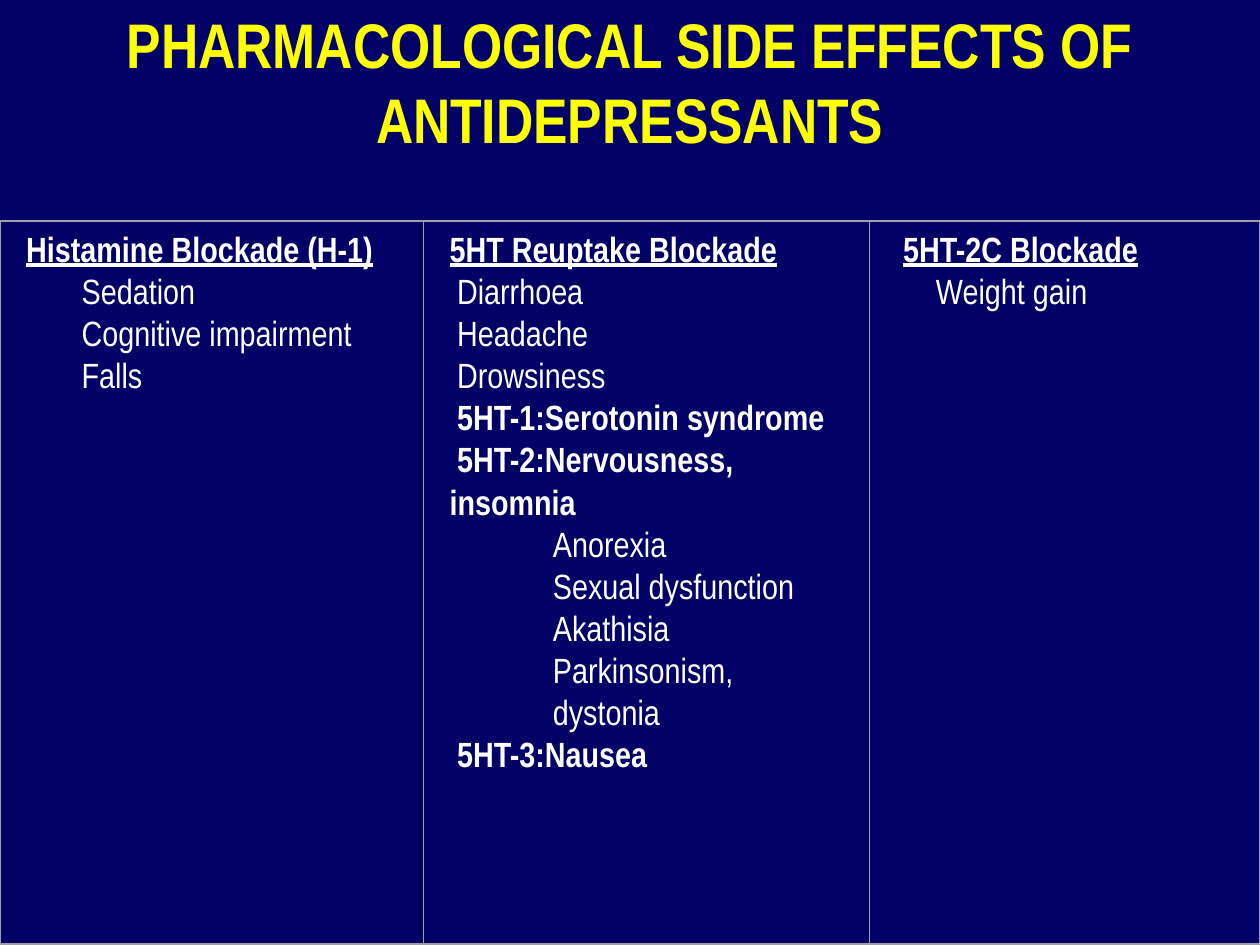
import pptx
import pptx.util
import pptx.dml.color
import pptx.enum.shapes
import pptx.enum.text

Inches = pptx.util.Inches
FONT = "Arial Narrow"
TOP, DEEP = 1.76, 5.73

# Each line: first-line indent in inches, text, bold
HIST = [(0, "Histamine Blockade (H-1)", True)] + [
    (0.44, text, False)
    for text in ("Sedation", "Cognitive impairment", "Falls")]
REUP = [
    (0, "5HT Reuptake Blockade", True),
    (0.06, "Diarrhoea", False),
    (0.06, "Headache", False),
    (0.06, "Drowsiness", False),
    (0.06, "5HT-1:Serotonin syndrome", True),
    (0.06, "5HT-2:Nervousness, insomnia", True),
    (0.82, "Anorexia", False),
    (0.82, "Sexual dysfunction", False),
    (0.82, "Akathisia", False),
    (0.82, "Parkinsonism,", False),
    (0.82, "dystonia", False),
    (0.06, "5HT-3:Nausea", True),
]
GAIN = [(0.06, "5HT-2C Blockade", True), (0.32, "Weight gain", False)]

# Each column: left edge, right edge, lines
COLS = [(0, 3.36, HIST), (3.36, 6.9, REUP), (6.9, 10, GAIN)]


def color(code):
    return pptx.dml.color.RGBColor.from_string(code)


def style(para, size, code, bold):
    for run in para.runs:
        font = run.font
        font.name, font.size, font.bold = FONT, pptx.util.Pt(size), bold
        font.color.rgb = color(code)


def add_box(slide, left, top, width, height):
    box = slide.shapes.add_textbox(
        Inches(left), Inches(top), Inches(width), Inches(height))
    box.text_frame.word_wrap = True
    return box.text_frame


def add_title(slide, text):
    frame = add_box(slide, 0, 0.04, 10, 1.63)
    frame.margin_top = 0
    frame.vertical_anchor = pptx.enum.text.MSO_ANCHOR.TOP
    para = frame.paragraphs[0]
    para.text = text
    para.alignment = pptx.enum.text.PP_ALIGN.CENTER
    style(para, 36, "FFFF00", True)


def add_lines(slide, left, width, lines):
    """Add a column's text; its first line is an underlined heading."""
    frame = add_box(slide, left, TOP, width, DEEP)
    for i, (indent, text, bold) in enumerate(lines):
        para = frame.add_paragraph() if i else frame.paragraphs[0]
        para.text = text
        para._p.get_or_add_pPr().set("indent", str(Inches(indent)))
        style(para, 20, "FFFFFF", bold)
        para.runs[0].font.underline = i == 0


def add_frame(slide, left, top, width, height, line):
    rect = slide.shapes.add_shape(
        pptx.enum.shapes.MSO_SHAPE.RECTANGLE,
        Inches(left), Inches(top), Inches(width), Inches(height))
    rect.shadow.inherit = False
    rect.fill.background()
    rect.line.color.rgb = color("A0A0A0")
    rect.line.width = pptx.util.Pt(line)


def main():
    deck = pptx.Presentation()
    deck.slide_width, deck.slide_height = Inches(10), Inches(7.5)
    slide = deck.slides.add_slide(deck.slide_layouts[6])
    slide.background.fill.solid()
    slide.background.fill.fore_color.rgb = color("000066")
    add_title(slide, "PHARMACOLOGICAL SIDE EFFECTS OF ANTIDEPRESSANTS")
    for left, right, lines in COLS:
        add_lines(slide, left + 0.11, right - left - 0.21, lines)
        add_frame(slide, left, TOP, right - left, DEEP, 0)
    add_frame(slide, 0, 1.75, 10, 5.75, 0.75)
    deck.save("out.pptx")


if __name__ == "__main__":
    main()
